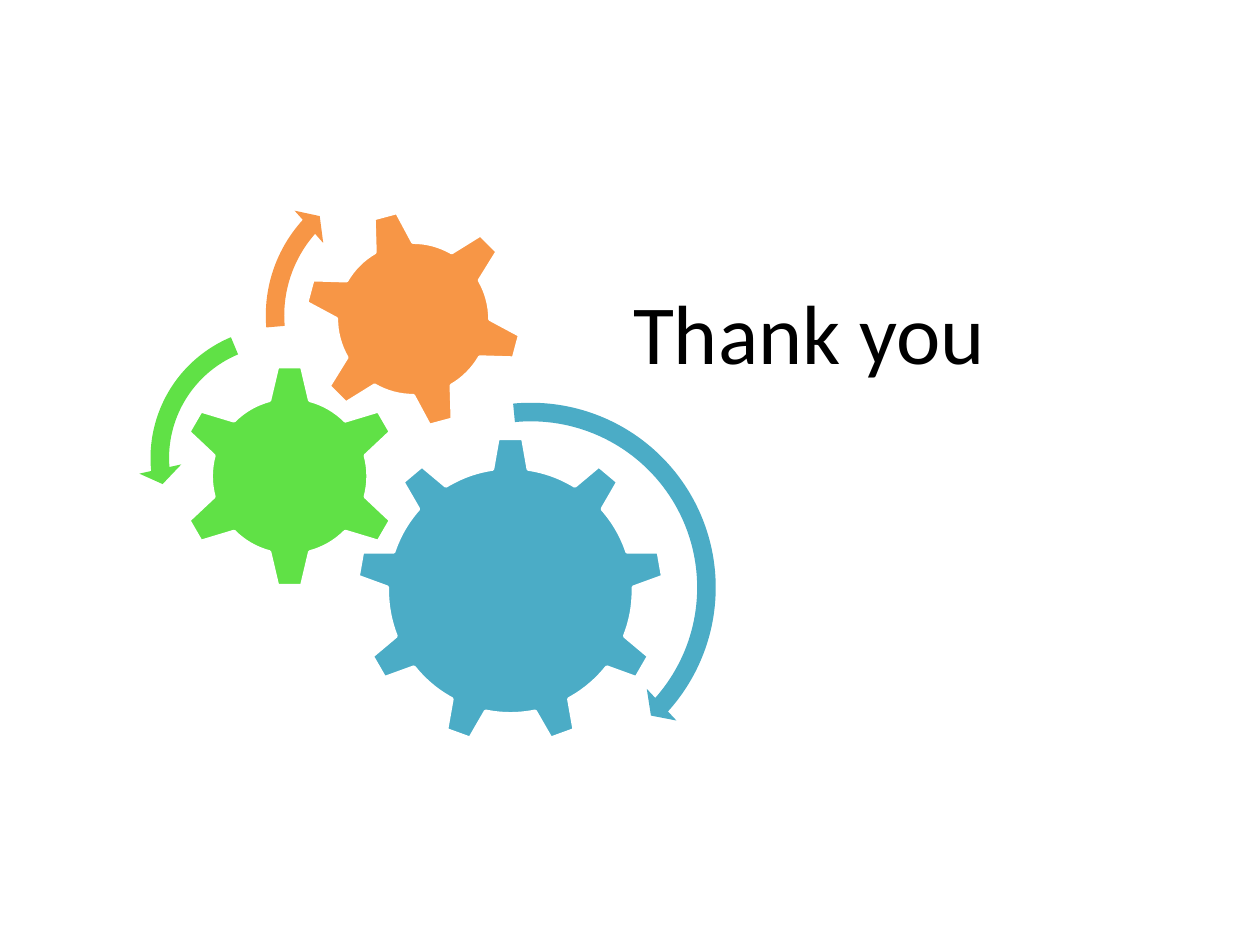
from pptx import Presentation
from pptx import util as u
from pptx.dml.color import RGBColor
from pptx.enum import shapes, text

BLUE, GREEN, ORANGE = "4BACC6", "60E146", "F79646"
KIND = shapes.MSO_SHAPE


def color(hex_string):
    return RGBColor.from_string(hex_string)


def add_square_shape(slide, kind, left, top, size, fill):
    shape = slide.shapes.add_shape(kind, u.Cm(left), u.Cm(top), u.Cm(size), u.Cm(size))
    shape.shadow.inherit = False
    shape.fill.solid()
    shape.fill.fore_color.rgb = color(fill)
    shape.line.fill.background()
    return shape


presentation = Presentation()
presentation.slide_width = u.Cm(25.4)
presentation.slide_height = u.Cm(19.05)
slide = presentation.slides.add_slide(presentation.slide_layouts[6])

message = slide.shapes.add_textbox(u.Cm(7.7), u.Cm(5.54), u.Cm(17.22), u.Cm(3.4))
message.text_frame.word_wrap = True
message.text_frame.text = "Thank you"
paragraph = message.text_frame.paragraphs[0]
paragraph.alignment = text.PP_ALIGN.CENTER
font = paragraph.runs[0].font
font.name = "Calibri"
font.size = u.Pt(48)
font.color.rgb = color("000000")

gears = [
    (KIND.GEAR_9, 7.19, 8.81, 6.2, BLUE, 0),
    (KIND.GEAR_6, 3.58, 7.34, 4.52, GREEN, 0),
    (KIND.GEAR_6, 6.12, 4.22, 4.42, ORANGE, 345),
]
for kind, left, top, size, fill, rotation in gears:
    gear = add_square_shape(slide, kind, left, top, size, fill)
    gear.rotation = rotation
    gear.line.color.rgb = color("FFFFFF")
    gear.line.width = u.Pt(2)

arrows = [
    (KIND.CIRCULAR_ARROW, 6.73, 7.87, 7.95, BLUE, (0.047, 2.99, 25.131, 158.679, 0.055)),
    (KIND.LEFT_CIRCULAR_ARROW, 2.79, 6.35, 5.77, GREEN, (0.065, 4.3, 104.891, 148.378, 0.075)),
    (KIND.CIRCULAR_ARROW, 5.11, 3.25, 6.22, ORANGE, (0.06, 3.941, 133.138, 105.082, 0.07)),
]
for kind, left, top, size, fill, adjustments in arrows:
    arrow = add_square_shape(slide, kind, left, top, size, fill)
    for index, value in enumerate(adjustments):
        arrow.adjustments[index] = value

presentation.save("out.pptx")
